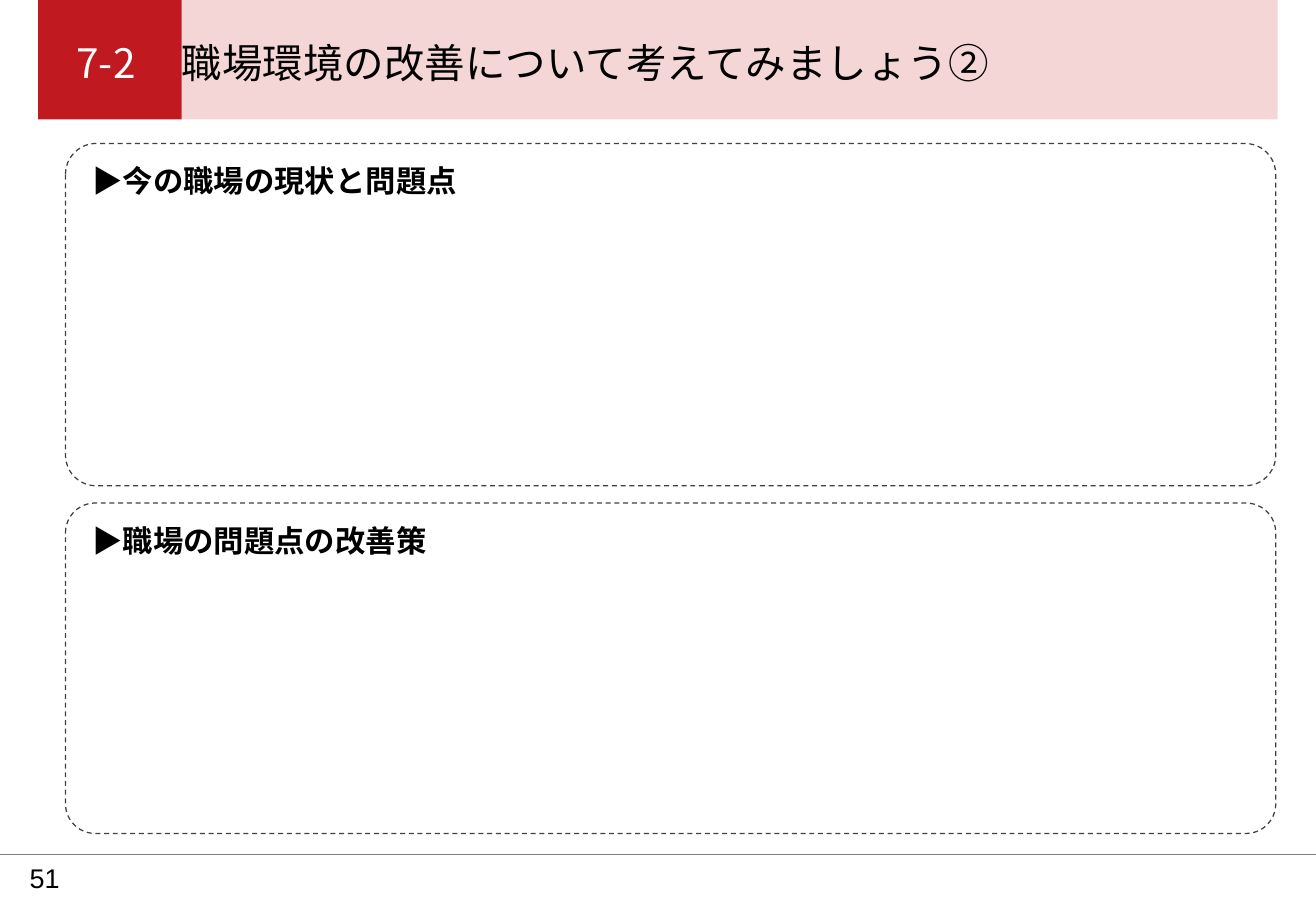
from dataclasses import dataclass

import pptx
import pptx.dml.color
import pptx.enum.dml
import pptx.enum.shapes
import pptx.enum.text
import pptx.oxml
import pptx.oxml.ns
import pptx.util
from pptx.dml.color import RGBColor
from pptx.util import Cm, Pt

RED = RGBColor(0xC1, 0x19, 0x20)
BAND_RED = RGBColor(0xC0, 0x00, 0x00)
FRAME_GRAY = RGBColor(0x40, 0x40, 0x40)
RULE_GRAY = RGBColor(0x7F, 0x7F, 0x7F)
BLACK = RGBColor(0, 0, 0)
WHITE = RGBColor(0xFF, 0xFF, 0xFF)

JAPANESE_FONT = "Noto Sans CJK JP"
SLIDE_WIDTH, SLIDE_HEIGHT = Cm(27.51), Cm(19.05)
HEADER_HEIGHT = Cm(2.5)
FOOTER_TOP = Cm(17.86)


@dataclass
class HeaderBlock:
    left: float
    width: float
    color: RGBColor
    opacity: int


@dataclass
class WorksheetBox:
    heading: str
    top: float
    height: float


HEADER_BLOCKS = [
    HeaderBlock(0.8, 3.0, RED, 100),
    HeaderBlock(3.8, 22.91, BAND_RED, 16),
]
WORKSHEET_BOXES = [
    WorksheetBox("▶︎今の職場の現状と問題点", 3.0, 7.16),
    WorksheetBox("▶︎職場の問題点の改善策", 10.52, 6.91),
]


def add_run(paragraph, text: str, size: float, color: RGBColor,
            font: str = JAPANESE_FONT, bold: bool = False) -> None:
    run = paragraph.add_run()
    run.text = text
    run.font.size = Pt(size)
    run.font.bold = bold
    run.font.color.rgb = color
    run.font.name = font
    east_asian = pptx.oxml.parse_xml(
        f'<a:ea {pptx.oxml.ns.nsdecls("a")} typeface="{font}"/>')
    run.font._element.append(east_asian)


def set_frame(frame, anchor, vertical_inset: tuple[float, float]) -> None:
    """Drop the side insets and set the top and bottom ones."""
    frame.word_wrap = True
    frame.auto_size = pptx.enum.text.MSO_AUTO_SIZE.NONE
    frame.vertical_anchor = anchor
    frame.margin_left = frame.margin_right = 0
    frame.margin_top, frame.margin_bottom = map(Cm, vertical_inset)
    frame.paragraphs[0].alignment = pptx.enum.text.PP_ALIGN.LEFT


def add_header_block(slide, block: HeaderBlock) -> None:
    shape = slide.shapes.add_shape(
        pptx.enum.shapes.MSO_SHAPE.RECTANGLE,
        Cm(block.left), 0, Cm(block.width), HEADER_HEIGHT)
    shape.shadow.inherit = False
    shape.line.fill.background()
    shape.fill.solid()
    shape.fill.fore_color.rgb = block.color
    if block.opacity < 100:
        color = shape.element.spPr.find(".//" + pptx.oxml.ns.qn("a:srgbClr"))
        color.append(pptx.oxml.parse_xml(
            f'<a:alpha {pptx.oxml.ns.nsdecls("a")} val="{block.opacity * 1000}"/>'))


def add_worksheet_box(slide, box: WorksheetBox) -> None:
    outline = slide.shapes.add_shape(
        pptx.enum.shapes.MSO_SHAPE.ROUNDED_RECTANGLE,
        Cm(1.37), Cm(box.top), Cm(25.3), Cm(box.height))
    outline.adjustments[0] = 0.09
    outline.shadow.inherit = False
    outline.fill.background()
    outline.line.color.rgb = FRAME_GRAY
    outline.line.width = Pt(0.75)
    outline.line.dash_style = pptx.enum.dml.MSO_LINE.DASH

    heading = slide.shapes.add_textbox(
        Cm(1.93), Cm(box.top + 0.33), Cm(25.0), Cm(1.65))
    set_frame(heading.text_frame, pptx.enum.text.MSO_ANCHOR.TOP, (0.15, 0.15))
    paragraph = heading.text_frame.paragraphs[0]
    paragraph.line_spacing = 0.9
    add_run(paragraph, box.heading, 18, BLACK, bold=True)


def fill_title(slide) -> None:
    title = slide.shapes.title
    title.left, title.top, title.width, title.height = (
        Cm(1.6), Cm(0.91), Cm(25.5), Cm(1.8))
    set_frame(title.text_frame, pptx.enum.text.MSO_ANCHOR.TOP, (0, 0.15))
    paragraph = title.text_frame.paragraphs[0]
    paragraph.line_spacing = 0.9
    # The tab stop puts the title at the left edge of the pale band.
    paragraph._p.get_or_add_pPr().append(pptx.oxml.parse_xml(
        f'<a:tabLst {pptx.oxml.ns.nsdecls("a")}>'
        f'<a:tab pos="{Cm(2.2)}" algn="l"/></a:tabLst>'))
    add_run(paragraph, "7-2\t", 24, WHITE)
    add_run(paragraph, "職場環境の改善について考えてみましょう②", 24, BLACK)
    # Bring the title in front of the header blocks.
    title.element.getparent().append(title.element)


def add_footer(slide) -> None:
    rule = slide.shapes.add_connector(
        pptx.enum.shapes.MSO_CONNECTOR.STRAIGHT,
        0, FOOTER_TOP, SLIDE_WIDTH, FOOTER_TOP)
    rule.line.color.rgb = RULE_GRAY
    rule.line.width = Pt(0.25)
    rule.element.spPr.append(pptx.oxml.parse_xml(
        f'<a:effectLst {pptx.oxml.ns.nsdecls("a")}/>'))

    page_number = slide.shapes.add_textbox(
        Cm(0.62), FOOTER_TOP, Cm(1.22), Cm(1.0))
    set_frame(page_number.text_frame, pptx.enum.text.MSO_ANCHOR.MIDDLE,
              (0.13, 0.13))
    add_run(page_number.text_frame.paragraphs[0], "51", 16, BLACK, font="Arial")


def main() -> None:
    presentation = pptx.Presentation()
    presentation.slide_width = SLIDE_WIDTH
    presentation.slide_height = SLIDE_HEIGHT
    slide = presentation.slides.add_slide(presentation.slide_layouts[5])
    add_footer(slide)
    for block in HEADER_BLOCKS:
        add_header_block(slide, block)
    for box in WORKSHEET_BOXES:
        add_worksheet_box(slide, box)
    fill_title(slide)
    presentation.save("out.pptx")


if __name__ == "__main__":
    main()
